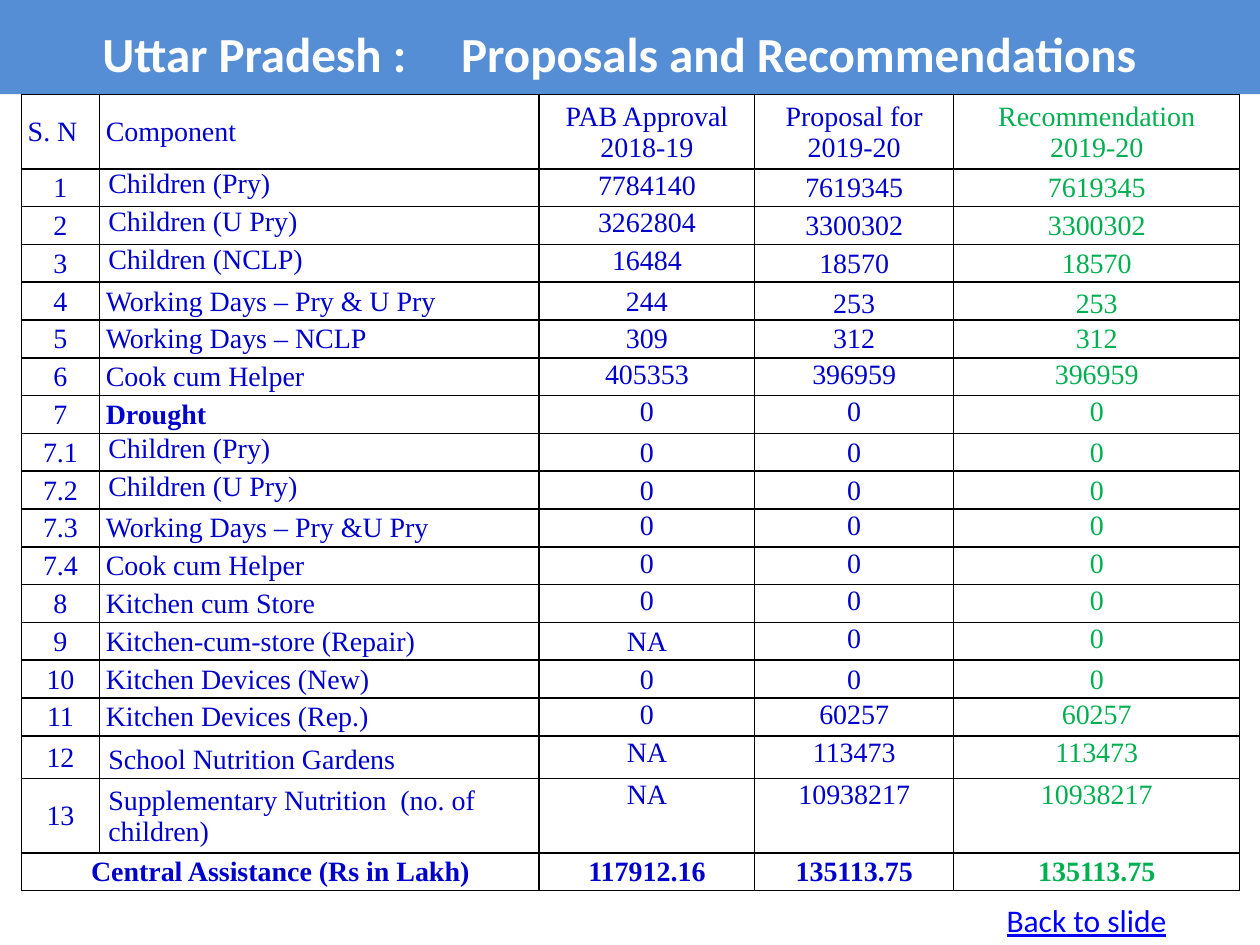
from lxml.etree import SubElement
from pptx import Presentation
from pptx.dml.color import RGBColor as Rgb
from pptx.enum.text import MSO_ANCHOR as Anchor, MSO_AUTO_SIZE as AutoSize, PP_ALIGN as Align
from pptx.oxml.ns import qn
from pptx.util import Inches, Pt

COLORS = {"banner": "558ED5", "white": "FFFFFF", "body": "0000CC",
          "recommended": "00B050", "link": "0000FF", "border": "000000"}
STATE, SUBJECT = "Uttar Pradesh :", "Proposals and Recommendations"
LINK = "Back to slide"
HEADINGS = ["S. N", "Component", "PAB Approval 2018-19",
            "Proposal for\n2019-20", "Recommendation\n2019-20"]
# Number, component, approved, proposed and recommended, anchors of the last four columns
COMPONENTS = [
    ("1", "Children (Pry)", "7784140", "7619345", "7619345", "ttmm"),
    ("2", "Children (U Pry)", "3262804", "3300302", "3300302", "ttmm"),
    ("3", "Children (NCLP)", "16484", "18570", "18570", "ttmm"),
    ("4", "Working Days – Pry & U Pry", "244", "253", "253", "mmbb"),
    ("5", "Working Days – NCLP", "309", "312", "312", "mmmm"),
    ("6", "Cook cum Helper", "405353", "396959", "396959", "mttt"),
    ("7", "Drought", "0", "0", "0", "mttt"),
    ("7.1", "Children (Pry)", "0", "0", "0", "tmmm"),
    ("7.2", "Children (U Pry)", "0", "0", "0", "tmmm"),
    ("7.3", "Working Days – Pry &U Pry", "0", "0", "0", "mttt"),
    ("7.4", "Cook cum Helper", "0", "0", "0", "mttt"),
    ("8", "Kitchen cum Store", "0", "0", "0", "mttt"),
    ("9", "Kitchen-cum-store (Repair)", "NA", "0", "0", "mmtt"),
    ("10", "Kitchen Devices (New)", "0", "0", "0", "mmmm"),
    ("11", "Kitchen Devices (Rep.)", "0", "60257", "60257", "mttt"),
    ("12", "School Nutrition Gardens", "NA", "113473", "113473", "mttt"),
    ("13", "Supplementary Nutrition  (no. of children)", "NA", "10938217", "10938217", "mttt"),
]
TOTAL = ["Central Assistance (Rs in Lakh)", "", "117912.16", "135113.75", "135113.75"]
COLUMNS = [0.62, 3.49, 1.71, 1.58, 2.27]
ROW, TALL_ROWS = 0.3, {0: 0.59, 16: 0.34, 17: 0.59}
INDENTED = {"12", "13"}
ANCHORS = {"t": Anchor.TOP, "m": Anchor.MIDDLE, "b": Anchor.BOTTOM}


def apply(target, **values):
    for key, value in values.items():
        setattr(target, key, value)


def style(font, size, name, color, **extra):
    apply(font, size=Pt(size), name=name, **extra)
    font.color.rgb = Rgb.from_string(COLORS[color])


def place(shape, *box):
    apply(shape, **dict(zip(("left", "top", "width", "height"), map(Inches, box))))


def draw_borders(cell):
    for side in ("a:lnL", "a:lnR", "a:lnT", "a:lnB"):
        line = SubElement(cell._tc.get_or_add_tcPr(), qn(side), w=str(Pt(1)))
        SubElement(SubElement(line, qn("a:solidFill")), qn("a:srgbClr"), val=COLORS["border"])


def fill_cell(cell, text, anchor, align, inset, top, color, bold, spacing):
    draw_borders(cell)
    cell.fill.solid()
    cell.fill.fore_color.rgb = Rgb.from_string(COLORS["white"])
    apply(cell, text=text, vertical_anchor=ANCHORS[anchor], margin_left=Inches(inset),
          margin_right=Inches(inset), margin_top=Inches(top), margin_bottom=0)
    for paragraph in cell.text_frame.paragraphs:
        apply(paragraph, alignment=align, line_spacing=spacing)
        for run in paragraph.runs:
            style(run.font, 16, "Times New Roman", color, bold=bold)


def add_banner(slide):
    banner = slide.shapes.title
    place(banner, 0, -0.05, 10, 0.76)
    banner.fill.solid()
    banner.fill.fore_color.rgb = Rgb.from_string(COLORS["banner"])
    frame = banner.text_frame
    apply(frame, word_wrap=True, auto_size=AutoSize.SHAPE_TO_FIT_TEXT,
          vertical_anchor=Anchor.MIDDLE, margin_left=Inches(0.1), margin_right=Inches(0.27),
          margin_top=Inches(0.05), margin_bottom=Inches(0.05))
    heading = frame.paragraphs[0]
    apply(heading, alignment=Align.CENTER, line_spacing=1.4)
    for part in (STATE, " ", SUBJECT):
        run = heading.add_run()
        run.text = part
        style(run.font, 28, "Calibri", "white", bold=True)
    heading.runs[1].font._element.set("spc", "2500")


def add_components(slide):
    rows = [(HEADINGS, "mmmm"), *((row[:5], row[5]) for row in COMPONENTS), (TOTAL, "mmmm")]
    heights = [TALL_ROWS.get(i, ROW) for i in range(len(rows))]
    table = slide.shapes.add_table(len(rows), len(COLUMNS), Inches(0.17), Inches(0.75),
                                   Inches(sum(COLUMNS)), Inches(sum(heights))).table
    apply(table, first_row=False, horz_banding=False)
    for column, width in zip(table.columns, COLUMNS):
        column.width = Inches(width)
    for row, height in zip(table.rows, heights):
        row.height = Inches(height)
    for r, (texts, anchors) in enumerate(rows):
        header, total = r == 0, texts is TOTAL
        for c, (text, anchor) in enumerate(zip(texts, "m" + anchors)):
            left = c == 1 or (header and c == 0)
            indented = c > 1 or anchor == "t" or texts[0] in INDENTED
            fill_cell(table.cell(r, c), text, anchor,
                      align=Align.LEFT if left else Align.CENTER,
                      inset=0.07 if c and indented and not header else 0.05,
                      top=0 if c == 1 and anchor == "t" else 0.01,
                      color="recommended" if c == 4 else "body",
                      bold=total or text == "Drought",
                      spacing=1.15 if c == 1 and texts[0] == "12" else None)
    last = len(rows) - 1
    table.cell(last, 0).merge(table.cell(last, 1))


def add_back_label(slide):
    frame = slide.shapes.add_textbox(*map(Inches, (7.89, 7.1, 2.36, 0.4))).text_frame
    apply(frame, word_wrap=True, auto_size=AutoSize.SHAPE_TO_FIT_TEXT)
    run = frame.paragraphs[0].add_run()
    run.text = LINK
    style(run.font, 18, "Calibri", "link", underline=True)


def main():
    deck = Presentation()
    apply(deck, slide_width=Inches(10), slide_height=Inches(7.5))
    slide = deck.slides.add_slide(deck.slide_layouts[5])
    add_banner(slide)
    add_components(slide)
    add_back_label(slide)
    deck.save("out.pptx")


if __name__ == "__main__":
    main()
